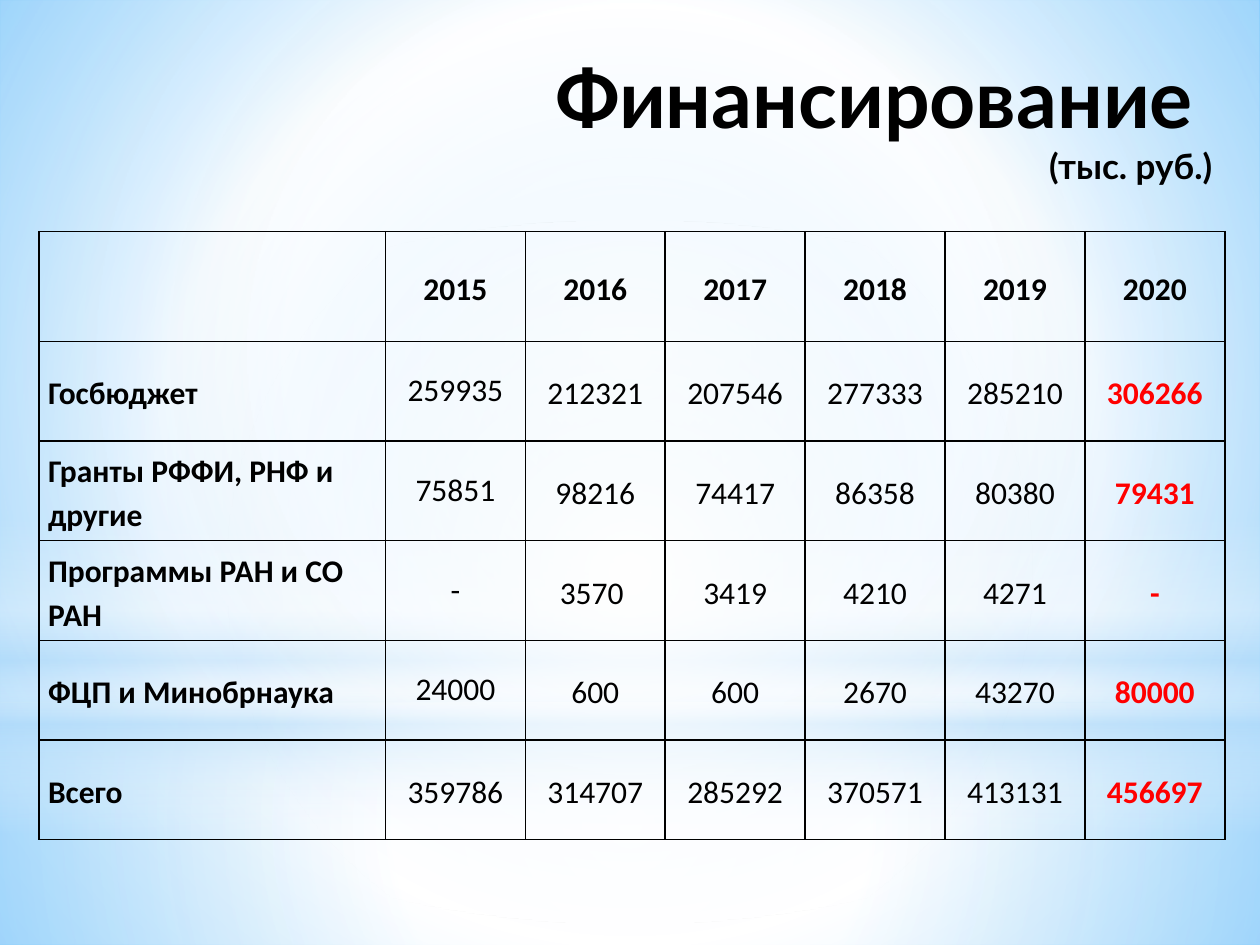
from lxml.etree import SubElement
from pptx import Presentation
from pptx.dml.color import RGBColor
from pptx.enum.shapes import MSO_SHAPE
from pptx.enum.text import MSO_ANCHOR, PP_ALIGN
from pptx.oxml.ns import qn
from pptx.util import Cm, Pt

COLORS = {"text": "000000", "accent": "FF0000", "white": "FFFFFF",
          "pale": "B4DCFA", "sky": "99D4FE", "blue": "54BDFF"}

TITLE, UNITS = "Финансирование ", "(тыс. руб.)"
YEARS = ["", "2015", "2016", "2017", "2018", "2019", "2020"]
FUNDING = [
    ["Госбюджет", "259935", "212321", "207546", "277333", "285210", "306266"],
    ["Гранты РФФИ, РНФ и другие", "75851", "98216", "74417", "86358", "80380", "79431"],
    ["Программы РАН и СО РАН", "-", "3570\u00a0", "3419", "4210", "4271", "-"],
    ["ФЦП и Минобрнаука", "24000", "600", "600", "2670", "43270", "80000"],
    ["Всего", "359786", "314707", "285292", "370571", "413131", "456697"],
]

# Gradient stops: position %, colour, opacity %
BACKGROUND = [(0, "sky", 100), (60, "white", 100), (100, "blue", 100)]
# Shape, left, top, width, height in cm, stops, linear or not
GLOWS = [
    (MSO_SHAPE.RECTANGLE, 0, 14.17, 25.4, 4.88,
     [(0, "white", 90), (37, "white", 75), (100, "pale", 78)], False),
    (MSO_SHAPE.RECTANGLE, 0, 0, 25.4, 14.17,
     [(0, "white", 87), (48, "white", 61), (100, "pale", 78)], False),
    (MSO_SHAPE.RECTANGLE, 0, 10.46, 25.4, 6.35,
     [(0, "white", 0), (29, "white", 29), (45, "pale", 40),
      (55, "white", 25), (65, "pale", 60), (100, "white", 0)], True),
    (MSO_SHAPE.OVAL, 0, 4.45, 25.4, 14.17,
     [(0, "white", 100), (56, "white", 0), (100, "white", 0)], False),
]

LABEL_W, YEAR_W = 6.98, 2.82
HEAD_H, ROW_H = 2.21, 2.01


def set_gradient(owner, fill, stops, linear=False):
    """Fill owner's first gradient with stops, vertical or from the centre."""
    fill.gradient()
    grad = owner.find(".//" + qn("a:gradFill"))
    for child in list(grad):
        grad.remove(child)
    gs_list = SubElement(grad, qn("a:gsLst"))
    for pos, color, opacity in stops:
        gs = SubElement(gs_list, qn("a:gs"), pos=str(pos * 1000))
        clr = SubElement(gs, qn("a:srgbClr"), val=COLORS[color])
        if opacity < 100:
            SubElement(clr, qn("a:alpha"), val=str(opacity * 1000))
    if linear:
        SubElement(grad, qn("a:lin"), ang="5400000", scaled="0")
    else:
        circle = SubElement(grad, qn("a:path"), path="circle")
        SubElement(circle, qn("a:fillToRect"), l="50000", t="50000", r="50000", b="50000")


def set_font(font, name, size, color="text", bold=True):
    font.name, font.size, font.bold = name, Pt(size), bold
    font.color.rgb = RGBColor.from_string(COLORS[color])


def add_borders(cell):
    tc_pr = cell._tc.get_or_add_tcPr()
    for side in ("a:lnL", "a:lnR", "a:lnT", "a:lnB"):
        ln = SubElement(tc_pr, qn(side), w=str(Pt(1)))
        SubElement(SubElement(ln, qn("a:solidFill")), qn("a:srgbClr"), val=COLORS["text"])


def add_title(s):
    tf = s.shapes.add_textbox(Cm(3.89), Cm(0.84), Cm(20.8), Cm(3.38)).text_frame
    tf.word_wrap = True
    tf.text = TITLE + "\v" + UNITS
    p = tf.paragraphs[0]
    p.alignment = PP_ALIGN.RIGHT
    for r, size in zip(p.runs, (46, 20)):
        set_font(r.font, "Lato", size)


def add_funding_table(s):
    rows = [YEARS] + FUNDING
    last_row, last_col = len(rows) - 1, len(YEARS) - 1
    widths = [LABEL_W] + [YEAR_W] * last_col
    heights = [HEAD_H] + [ROW_H] * last_row
    table = s.shapes.add_table(len(rows), len(YEARS), Cm(0.79), Cm(4.67),
                               Cm(sum(widths)), Cm(sum(heights))).table
    table.first_row = table.horz_banding = False
    for col, width in zip(table.columns, widths):
        col.width = Cm(width)
    for row, height in zip(table.rows, heights):
        row.height = Cm(height)
    for i, values in enumerate(rows):
        for j, value in enumerate(values):
            cell = table.cell(i, j)
            cell.vertical_anchor = MSO_ANCHOR.MIDDLE
            cell.margin_left = cell.margin_right = Cm(0.18)
            cell.margin_top = cell.margin_bottom = 0
            add_borders(cell)
            cell.fill.background()
            p = cell.text_frame.paragraphs[0]
            p.text = value
            p.alignment = PP_ALIGN.CENTER if j else PP_ALIGN.LEFT
            if j != 1 or i in (0, last_row):
                p.line_spacing = 1.15
            latest = i > 0 and j == last_col
            for r in p.runs:
                set_font(r.font, "Calibri", 18, "accent" if latest else "text",
                         i == 0 or j in (0, last_col))


def main():
    prs = Presentation()
    prs.slide_width, prs.slide_height = Cm(25.4), Cm(19.05)
    s = prs.slides.add_slide(prs.slide_layouts[6])
    set_gradient(s.element, s.background.fill, BACKGROUND)
    for kind, x, y, w, h, stops, linear in GLOWS:
        sp = s.shapes.add_shape(kind, Cm(x), Cm(y), Cm(w), Cm(h))
        sp.shadow.inherit = False
        sp.line.fill.background()
        set_gradient(sp.element, sp.fill, stops, linear)
    add_title(s)
    add_funding_table(s)
    prs.save("out.pptx")


if __name__ == "__main__":
    main()
